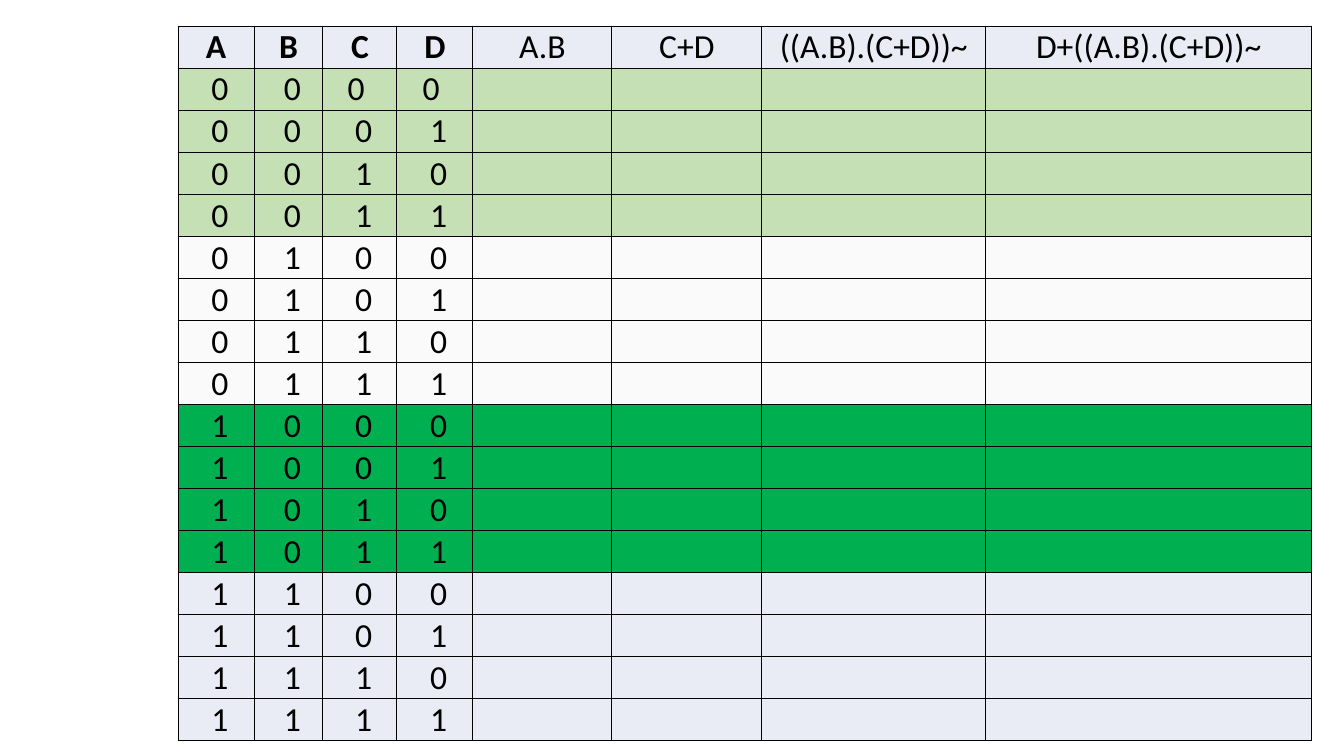
"""Build a slide with a four-variable truth table whose result columns are left to fill in."""
from itertools import product

from lxml import etree
from pptx import Presentation
from pptx import util as u
from pptx.dml.color import RGBColor
from pptx.enum import text
from pptx.oxml import ns

PX = 914400 / 100.8
COLORS = {
    "text": "000000",
    "border": "000000",
    "lavender": "E9EBF5",
    "light_green": "C5E0B4",
    "off_white": "FAFAFA",
    "green": "00B050",
}
HEADINGS = ["A", "B", "C", "D", "A.B", "C+D", "((A.B).(C+D))~", "D+((A.B).(C+D))~"]
COLUMN_WIDTHS = [76, 69, 74, 76, 139, 150, 224, 326]
ROW_HEIGHT = 42
GROUP_FILLS = ["light_green", "off_white", "green", "lavender"]


def px(length):
    return u.Emu(round(length * PX))


def write_cell(cell, content, fill, bold=False, anchor=text.MSO_ANCHOR.BOTTOM):
    cell.margin_left = cell.margin_right = cell.margin_top = px(1)
    cell.margin_bottom = 0
    cell.vertical_anchor = anchor
    properties = cell._tc.get_or_add_tcPr()
    for side in ("lnL", "lnR", "lnT", "lnB"):
        line = etree.SubElement(properties, ns.qn(f"a:{side}"), w=str(u.Pt(0.75)))
        line_fill = etree.SubElement(line, ns.qn("a:solidFill"))
        etree.SubElement(line_fill, ns.qn("a:srgbClr"), val=COLORS["border"])
    cell.fill.solid()
    cell.fill.fore_color.rgb = RGBColor.from_string(COLORS[fill])
    if content:
        paragraph = cell.text_frame.paragraphs[0]
        paragraph.alignment = text.PP_ALIGN.CENTER
        run = paragraph.add_run()
        run.text = content
        run.font.name = "Calibri"
        run.font.size = u.Pt(24)
        run.font.bold = bold
        run.font.color.rgb = RGBColor.from_string(COLORS["text"])


presentation = Presentation()
presentation.slide_width = px(1344)
presentation.slide_height = px(756)
slide = presentation.slides.add_slide(presentation.slide_layouts[6])

input_rows = list(product("01", repeat=4))
row_count = len(input_rows) + 1
table = slide.shapes.add_table(
    row_count, len(HEADINGS), px(178), px(26), px(sum(COLUMN_WIDTHS)), px(ROW_HEIGHT * row_count)
).table
table.first_row = False
table.horz_banding = False
for column, width in zip(table.columns, COLUMN_WIDTHS):
    column.width = px(width)
for row in table.rows:
    row.height = px(ROW_HEIGHT)

for column_index, heading in enumerate(HEADINGS):
    write_cell(table.cell(0, column_index), heading, "lavender",
               bold=column_index < 4, anchor=text.MSO_ANCHOR.MIDDLE)

for row_index, bits in enumerate(input_rows):
    for column_index in range(len(HEADINGS)):
        content = ""
        if column_index < 4:
            bit = bits[column_index]
            content = f"{bit} " if row_index == 0 and column_index >= 2 else f" {bit}"
        write_cell(table.cell(row_index + 1, column_index), content, GROUP_FILLS[row_index // 4])

presentation.save("out.pptx")
